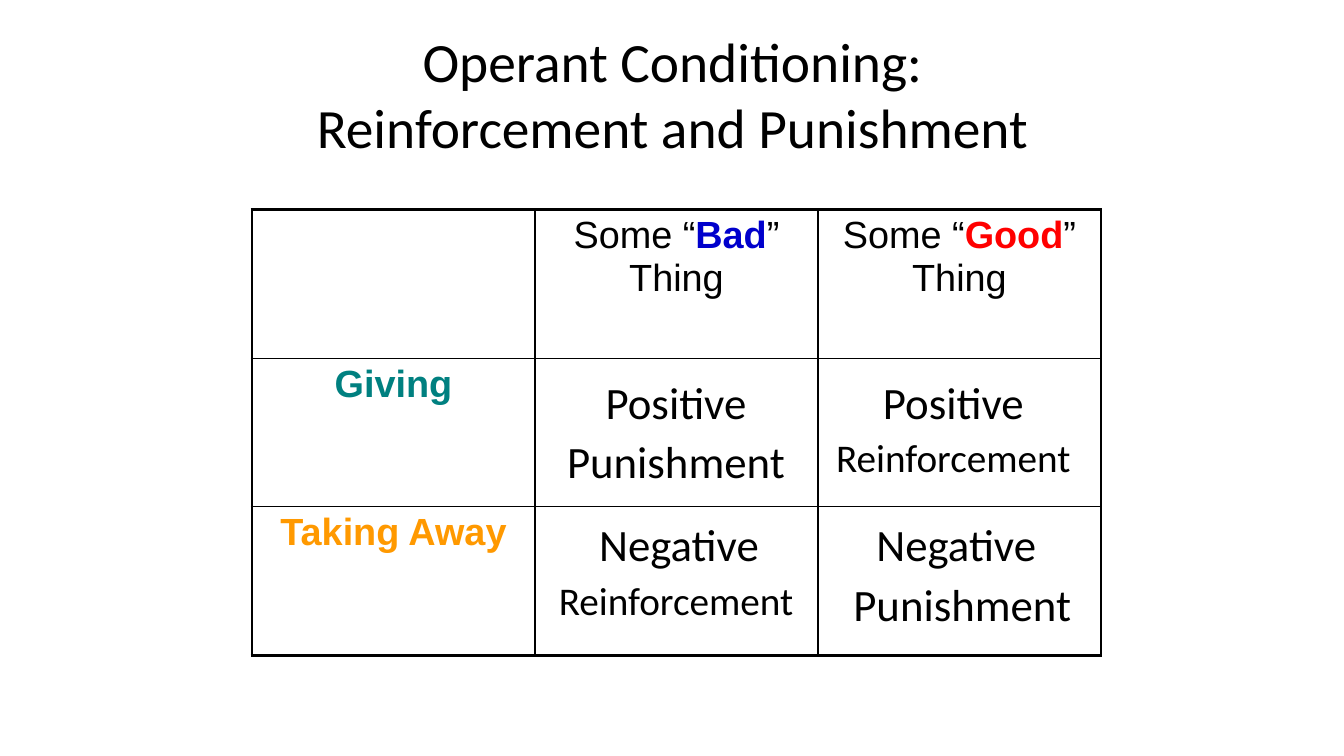
"""Build the operant conditioning slide with its reinforcement and punishment table."""
from dataclasses import dataclass

from lxml import etree
from pptx import Presentation
from pptx.dml.color import RGBColor
from pptx.enum.text import MSO_ANCHOR, MSO_AUTO_SIZE, PP_ALIGN
from pptx.oxml.ns import qn
from pptx.util import Inches, Pt

CENTER = PP_ALIGN.CENTER
MIDDLE = MSO_ANCHOR.MIDDLE
GROW = MSO_AUTO_SIZE.SHAPE_TO_FIT_TEXT
NO_RESIZE = MSO_AUTO_SIZE.NONE
TITLE_ONLY = 5


@dataclass(frozen=True)
class Theme:
    text_font: str = "Calibri"
    table_font: str = "Arial"
    title_size: float = 39.6
    label_size: float = 32
    small_size: float = 28
    table_size: float = 27
    outer_line: float = 2.25
    inner_line: float = 1
    black: str = "000000"
    bad: str = "0000CC"
    good: str = "FF0000"
    giving: str = "008080"
    taking: str = "FF9900"


THEME = Theme()


@dataclass(frozen=True)
class Span:
    text: str
    color: str = THEME.black
    bold: bool = False


@dataclass(frozen=True)
class Label:
    text: str
    left: float
    top: float
    size: float = THEME.label_size
    height: float = 0.64


@dataclass(frozen=True)
class Heading:
    row: int
    column: int
    spans: tuple[Span, ...]


HEADINGS = (
    Heading(0, 1, (Span("Some “"), Span("Bad", THEME.bad, True), Span("” Thing"))),
    Heading(0, 2, (Span("Some “"), Span("Good", THEME.good, True), Span("” Thing"))),
    Heading(1, 0, (Span("Giving", THEME.giving, True),)),
    Heading(2, 0, (Span("Taking Away", THEME.taking, True),)),
)

LABELS = (
    Label("Positive", 5.33, 3.67),
    Label("Positive", 8.08, 3.67),
    Label("Negative", 5.36, 5.08),
    Label("Negative", 8.11, 5.08),
    Label("Punishment", 5.33, 4.25),
    Label("Reinforcement", 8.08, 4.25, THEME.small_size, 0.57),
    Label("Punishment", 8.17, 5.67),
    Label("Reinforcement", 5.33, 5.67, THEME.small_size, 0.57),
)


def write(frame, spans: tuple[Span, ...], font: str, size: float) -> None:
    """Write the spans as one centred paragraph."""
    para = frame.paragraphs[0]
    para.text = "".join(span.text for span in spans) if len(spans) == 1 else ""
    para.alignment = CENTER
    runs = para.runs if len(spans) == 1 else [para.add_run() for _ in spans]
    if len(spans) > 1:
        for run, span in zip(runs, spans):
            run.text = span.text
    for index, run in enumerate(runs):
        span = spans[min(index, len(spans) - 1)]
        for name, value in {"name": font, "size": Pt(size), "bold": span.bold}.items():
            setattr(run.font, name, value)
        run.font.color.rgb = RGBColor.from_string(span.color)


def draw_title(page) -> None:
    """Place and fill the title placeholder."""
    title = page.shapes.title
    places = {"left": 0.67, "top": 0.3, "width": 12, "height": 1.25}
    for name, value in places.items():
        setattr(title, name, Inches(value))
    frame = title.text_frame
    for name, value in {"vertical_anchor": MIDDLE, "word_wrap": True, "auto_size": NO_RESIZE}.items():
        setattr(frame, name, value)
    text = "Operant Conditioning:\vReinforcement and Punishment"
    write(frame, (Span(text),), THEME.text_font, THEME.title_size)


def add_borders(cell, outer: dict[str, bool]) -> None:
    """Draw the cell's four borders, heavier on the table's outer sides."""
    properties = cell._tc.get_or_add_tcPr()
    for side, is_outer in outer.items():
        width = THEME.outer_line if is_outer else THEME.inner_line
        line = etree.SubElement(properties, qn(f"a:ln{side}"), w=str(Pt(width)))
        fill = etree.SubElement(line, qn("a:solidFill"))
        etree.SubElement(fill, qn("a:srgbClr"), val=THEME.black)


def draw_table(page, count: int = 3) -> None:
    """Draw the square table with its headings."""
    box = page.shapes.add_table(count, count, Inches(2.5), Inches(2.08), Inches(8.42), Inches(4.42))
    table = box.table
    table.first_row = False
    table.horz_banding = False
    last = count - 1
    for row in range(count):
        for column in range(count):
            cell = table.cell(row, column)
            add_borders(cell, {"L": column == 0, "R": column == last, "T": row == 0, "B": row == last})
            cell.fill.background()
    for heading in HEADINGS:
        frame = table.cell(heading.row, heading.column).text_frame
        write(frame, heading.spans, THEME.table_font, THEME.table_size)


def draw_label(page, label: Label) -> None:
    """Draw one outcome label over the table."""
    box = page.shapes.add_textbox(Inches(label.left), Inches(label.top), Inches(2.75), Inches(label.height))
    frame = box.text_frame
    frame.word_wrap = True
    frame.auto_size = GROW
    write(frame, (Span(label.text),), THEME.text_font, label.size)


def main() -> None:
    """Build and save the deck."""
    deck = Presentation()
    deck.slide_width = Inches(13.33)
    deck.slide_height = Inches(7.5)
    page = deck.slides.add_slide(deck.slide_layouts[TITLE_ONLY])
    draw_title(page)
    draw_table(page)
    for label in LABELS:
        draw_label(page, label)
    deck.save("out.pptx")


if __name__ == "__main__":
    main()
